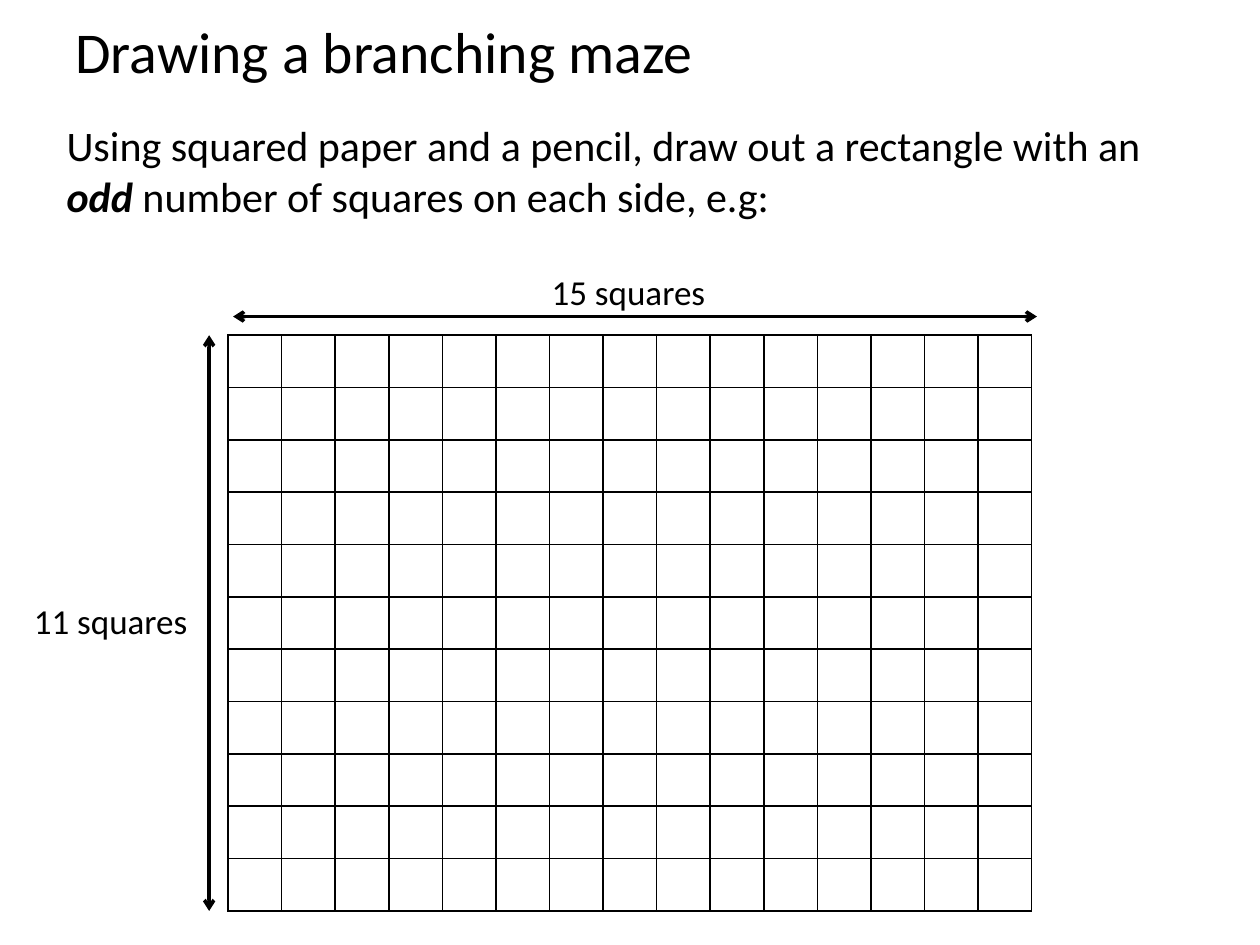
import dataclasses

import pptx
import pptx.dml.color
import pptx.enum.shapes
import pptx.enum.text
import pptx.oxml
import pptx.oxml.ns
import pptx.util

SLIDE_WIDTH = pptx.util.Inches(10)
SLIDE_HEIGHT = pptx.util.Inches(7.5)
FONT = "Calibri"
BLACK = "000000"
WHITE = "FFFFFF"
COLUMNS = 15
ROWS = 11


@dataclasses.dataclass(frozen=True)
class Area:
    """Percentages of the slide's width and height."""
    left: float
    top: float
    width: float
    height: float

    def lengths(self) -> tuple[int, int, int, int]:
        return (across(self.left), down(self.top),
                across(self.width), down(self.height))


@dataclasses.dataclass(frozen=True)
class Span:
    text: str
    emphasis: bool = False


@dataclasses.dataclass(frozen=True)
class Label:
    area: Area
    spans: tuple[Span, ...]
    size: int
    anchor: pptx.enum.text.MSO_ANCHOR = pptx.enum.text.MSO_ANCHOR.TOP
    spacing: float = 1.0


@dataclasses.dataclass(frozen=True)
class Arrow:
    start: tuple[float, float]
    end: tuple[float, float]


def across(percent: float) -> int:
    return round(SLIDE_WIDTH * percent / 100)


def down(percent: float) -> int:
    return round(SLIDE_HEIGHT * percent / 100)


def color(value: str) -> pptx.dml.color.RGBColor:
    return pptx.dml.color.RGBColor.from_string(value)


def add_span(para, text: str, *, size: int, emphasis: bool = False, fill: str = BLACK) -> None:
    span = para.add_run()
    span.text = text
    span.font.name = FONT
    span.font.size = pptx.util.Pt(size)
    span.font.bold = emphasis
    span.font.italic = emphasis
    span.font.color.rgb = color(fill)


def draw_label(page, label: Label) -> None:
    box = page.shapes.add_textbox(*label.area.lengths())
    frame = box.text_frame
    frame.word_wrap = True
    frame.vertical_anchor = label.anchor
    para = frame.paragraphs[0]
    para.line_spacing = label.spacing
    for span in label.spans:
        add_span(para, span.text, size=label.size, emphasis=span.emphasis)


def draw_arrow(page, arrow: Arrow) -> None:
    (left, top), (right, bottom) = arrow.start, arrow.end
    connector = page.shapes.add_connector(
        pptx.enum.shapes.MSO_CONNECTOR.STRAIGHT,
        across(left), down(top), across(right), down(bottom))
    connector.line.color.rgb = color(BLACK)
    connector.line.width = pptx.util.Pt(2)
    outline = connector.line._get_or_add_ln()
    for tag in ("a:headEnd", "a:tailEnd"):
        outline.append(pptx.oxml.parse_xml(
            f'<{tag} {pptx.oxml.ns.nsdecls("a")} type="arrow"/>'))
    connector._element.spPr.append(pptx.oxml.parse_xml(
        f'<a:effectLst {pptx.oxml.ns.nsdecls("a")}/>'))


def draw_cell(cell) -> None:
    properties = cell._tc.get_or_add_tcPr()
    for side in "LRTB":
        properties.append(pptx.oxml.parse_xml(
            f'<a:ln{side} {pptx.oxml.ns.nsdecls("a")} w="{pptx.util.Pt(1)}">'
            f'<a:solidFill><a:srgbClr val="{BLACK}"/></a:solidFill></a:ln{side}>'))
    cell.fill.solid()
    cell.fill.fore_color.rgb = color(WHITE)


def draw_squares(page, area: Area) -> None:
    table = page.shapes.add_table(ROWS, COLUMNS, *area.lengths()).table
    table.first_row = False
    table.horz_banding = False
    for column in table.columns:
        column.width = across(area.width / COLUMNS)
    for row in table.rows:
        row.height = down(area.height / ROWS)
    for cell in table.iter_cells():
        draw_cell(cell)


SQUARES = Area(18.1, 35.47, 63.8, 60.93)
LABELS = (
    Label(Area(5, -2.53, 90, 16.67), (Span("Drawing a branching maze"),), 33,
          pptx.enum.text.MSO_ANCHOR.MIDDLE, 0.9),
    Label(Area(4.3, 12, 91.3, 12.13),
          (Span("Using squared paper and a pencil, draw out a rectangle with an "),
           Span("odd", emphasis=True),
           Span(" number of squares on each side, e.g:")), 24),
    Label(Area(1.7, 62.8, 17.7, 5.87), (Span(f"{ROWS} squares"),), 20),
    Label(Area(42.8, 28, 20.6, 5.87), (Span(f"{COLUMNS} squares"),), 20),
)
ARROWS = (
    Arrow((16.6, SQUARES.top), (16.6, SQUARES.top + SQUARES.height)),
    Arrow((18.5, 33.5), (18.5 + SQUARES.width, 33.5)),
)


def main() -> None:
    deck = pptx.Presentation()
    deck.slide_width = SLIDE_WIDTH
    deck.slide_height = SLIDE_HEIGHT
    page = deck.slides.add_slide(deck.slide_layouts[6])
    page.background.fill.solid()
    page.background.fill.fore_color.rgb = color(WHITE)
    draw_squares(page, SQUARES)
    for arrow in ARROWS:
        draw_arrow(page, arrow)
    for label in LABELS:
        draw_label(page, label)
    deck.save("out.pptx")


if __name__ == "__main__":
    main()
